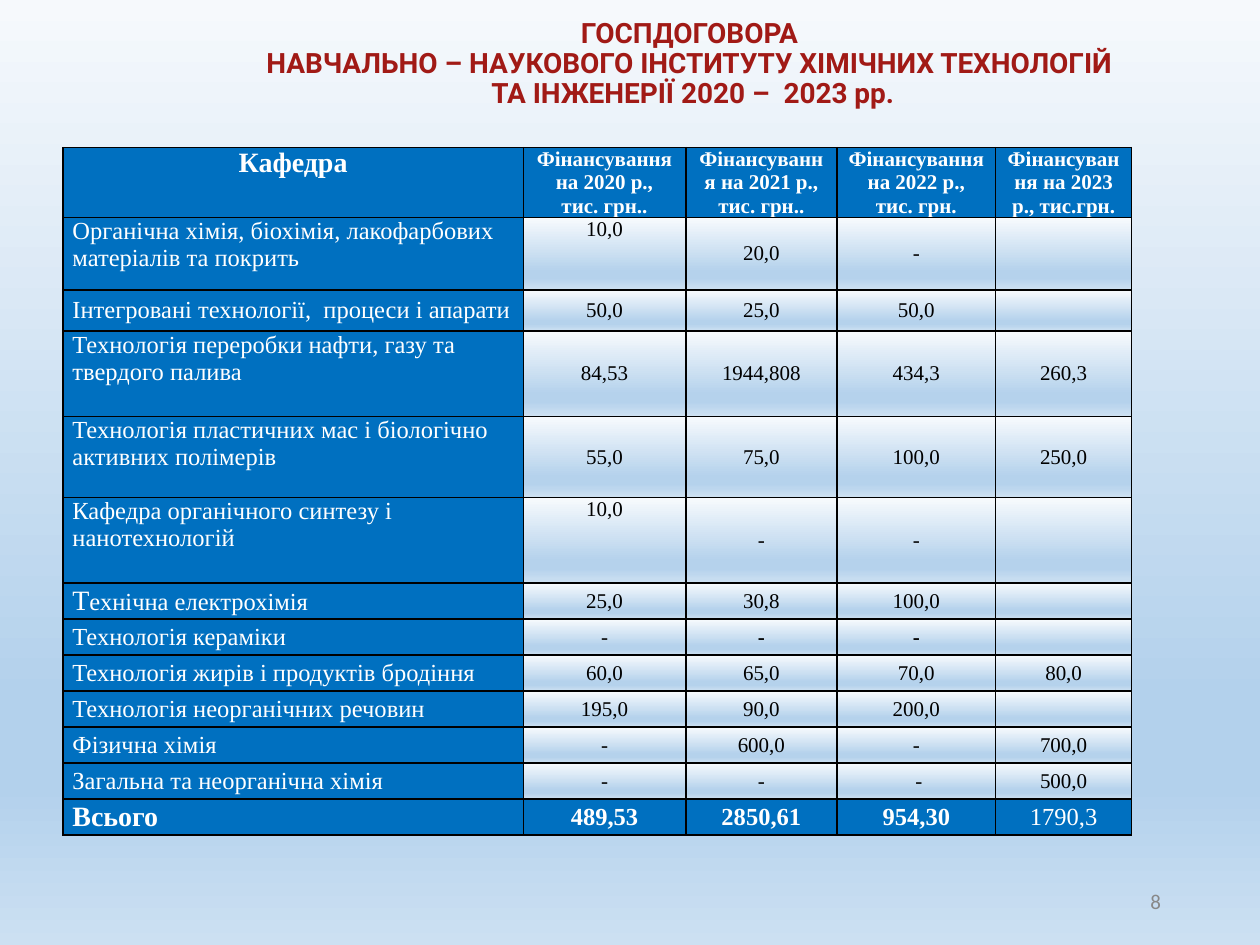
"""Build the slide on contract funding by department."""
from dataclasses import dataclass

from lxml.etree import SubElement
from pptx import Presentation
from pptx.dml.color import RGBColor
from pptx.enum.text import MSO_ANCHOR, MSO_AUTO_SIZE, PP_ALIGN
from pptx.oxml.ns import qn
from pptx.util import Pt


@dataclass(frozen=True)
class Theme:
    """Colours, fonts and type sizes of the slide."""
    red: str = "A11A16"
    blue: str = "0070C0"
    white: str = "FFFFFF"
    black: str = "000000"
    grey: str = "888888"
    page: tuple = ("F6F9FC", "B3D1EC", "B3D1EC", "CCE0F2")
    pale: tuple = ("F7FAFD", "B5D2EC", "B5D2EC", "CEE1F2")
    stops: tuple = (0, 74, 83, 100)
    head: str = "Roboto"
    body: str = "Times New Roman"
    foot: str = "Calibri"
    big: int = 16
    mid: int = 14
    small: int = 12


THEME = Theme()
TITLE = ("ГОСПДОГОВОРА \vНАВЧАЛЬНО – НАУКОВОГО ІНСТИТУТУ ХІМІЧНИХ ТЕХНОЛОГІЙ "
         "\vТА ІНЖЕНЕРІЇ 2020 –  2023 рр.")
WIDTHS = (263, 92.9, 86.4, 90.7, 77.7)
LOW = 20.6
HEAD = ("Кафедра", "Фінансування на 2020 р.,\nтис. грн..",
        "Фінансування на 2021 р.,\nтис. грн..",
        "Фінансування на 2022 р.,\nтис. грн.",
        "Фінансування на 2023 р., тис.грн.")
ROWS = (
    (41.4, "Органічна хімія, біохімія, лакофарбових матеріалів та покрить",
     "10,0", "20,0", "-", ""),
    (23.5, "Інтегровані технології,  процеси і апарати",
     "50,0", "25,0", "50,0", ""),
    (48.6, "Технологія переробки нафти, газу та твердого палива",
     "84,53", "1944,808", "434,3", "260,3"),
    (46.6, "Технологія пластичних мас і біологічно активних полімерів",
     "55,0", "75,0", "100,0", "250,0"),
    (48.8, "Кафедра органічного синтезу і нанотехнологій",
     "10,0", "-", "-", ""),
    (LOW, "Технічна електрохімія", "25,0", "30,8", "100,0", ""),
    (LOW, "Технологія кераміки", "-", "-", "-", ""),
    (LOW, "Технологія жирів і продуктів бродіння",
     "60,0", "65,0", "70,0", "80,0"),
    (LOW, "Технологія неорганічних речовин", "195,0", "90,0", "200,0", ""),
    (LOW, "Фізична хімія", "-", "600,0", "-", "700,0"),
    (LOW, "Загальна та неорганічна хімія", "-", "-", " -", "500,0"),
)
TOTAL = ("Всього", "489,53", "2850,61", "954,30", "1790,3")


def write(frame, text, size=THEME.small, color=THEME.black, font=THEME.body,
          bold=False, align=PP_ALIGN.CENTER, space=1.0, lead=None):
    """Fill a frame with text, one paragraph a line; lead sizes the first letter."""
    frame.word_wrap = True
    for num, line in enumerate(text.split("\n")):
        para = frame.add_paragraph() if num else frame.paragraphs[0]
        para.alignment, para.line_spacing = align, space
        if not line:
            SubElement(para._p, qn("a:endParaRPr"), sz=str(size * 100))
            continue
        parts = [(line[0], lead), (line[1:], size)] if lead else [(line, size)]
        for part, points in parts:
            for spot, piece in enumerate(part.split("\v")):
                if spot:
                    para.add_line_break()
                run = para.add_run()
                run.text = piece
                run.font.name, run.font.size = font, Pt(points)
                run.font.bold = bold
                run.font.color.rgb = RGBColor.from_string(color)


def blend(fill, root, tints):
    """Give a fill a downward gradient of the theme's stops."""
    fill.solid()
    node = next(root.iter(qn("a:solidFill"), qn("a:gradFill")))
    while node.getparent().tag.startswith(qn("a:ln")):
        node = node.getnext()
    node.tag
    grad = SubElement(node.getparent(), qn("a:gradFill"), rotWithShape="1")
    node.getparent().replace(node, grad)
    stops = SubElement(grad, qn("a:gsLst"))
    for place, tint in zip(THEME.stops, tints):
        stop = SubElement(stops, qn("a:gs"), pos=str(place * 1000))
        SubElement(stop, qn("a:srgbClr"), val=tint)
    SubElement(grad, qn("a:lin"), ang="5400000", scaled="0")


def edge(cell):
    """Draw a thin black line on all four sides of a cell."""
    props = cell._tc.get_or_add_tcPr()
    for side in ("a:lnL", "a:lnR", "a:lnT", "a:lnB"):
        line = SubElement(props, qn(side), w=str(Pt(1)))
        SubElement(SubElement(line, qn("a:solidFill")),
                   qn("a:srgbClr"), val=THEME.black)


def put(cell, text, tint=None, top=False, **form):
    """Fill one cell: flat when a tint is given, else pale gradient."""
    cell.margin_left = cell.margin_right = Pt(5.4)
    cell.margin_top = cell.margin_bottom = 0
    cell.vertical_anchor = MSO_ANCHOR.TOP if top else MSO_ANCHOR.MIDDLE
    if tint:
        cell.fill.solid()
        cell.fill.fore_color.rgb = RGBColor.from_string(tint)
    else:
        blend(cell.fill, cell._tc.tcPr, THEME.pale)
    props = cell._tc.tcPr
    paint = props[0]
    edge(cell)
    props.append(paint)
    write(cell.text_frame, text, **form)


def title(slide):
    """Place the title."""
    shape = slide.shapes.title
    shape.left, shape.top = Pt(90), Pt(0)
    shape.width, shape.height = Pt(612), Pt(73.4)
    frame = shape.text_frame
    frame.auto_size = MSO_AUTO_SIZE.NONE
    frame.vertical_anchor = MSO_ANCHOR.MIDDLE
    write(frame, TITLE, size=THEME.big, color=THEME.red, font=THEME.head,
          bold=True, space=0.9)


def grid(slide):
    """Place the table of funding."""
    highs = [40, *(row[0] for row in ROWS), LOW]
    table = slide.shapes.add_table(
        len(highs), len(WIDTHS), Pt(36), Pt(84.4),
        Pt(sum(WIDTHS)), Pt(sum(highs))).table
    table.first_row = table.horz_banding = False
    for col, width in zip(table.columns, WIDTHS):
        col.width = Pt(width)
    for row, high in zip(table.rows, highs):
        row.height = Pt(high)
    dark = {"tint": THEME.blue, "color": THEME.white}
    for col, text in enumerate(HEAD):
        put(table.cell(0, col), text, top=True, bold=True,
            size=THEME.small if col else THEME.big, **dark)
    for num, (high, name, *sums) in enumerate(ROWS, 1):
        put(table.cell(num, 0), name, top=high > 40, size=THEME.mid,
            align=PP_ALIGN.LEFT, **dark,
            lead=THEME.big if name.startswith("Технічна") else None)
        for col, text in enumerate(sums, 1):
            put(table.cell(num, col), text, top=text == "10,0",
                bold=name.endswith("кераміки") and col > 1)
    for col, text in enumerate(TOTAL):
        put(table.cell(len(highs) - 1, col), text, bold=col < 4,
            size=THEME.mid if col else THEME.big,
            align=PP_ALIGN.CENTER if col else PP_ALIGN.LEFT, **dark)


def number(slide):
    """Place the page number."""
    box = slide.shapes.add_textbox(Pt(508.5), Pt(500.5), Pt(162), Pt(28.8))
    box.text_frame.vertical_anchor = MSO_ANCHOR.MIDDLE
    write(box.text_frame, "8", color=THEME.grey, font=THEME.foot,
          align=PP_ALIGN.RIGHT)


def main():
    """Build and save the slide."""
    deck = Presentation()
    deck.slide_width, deck.slide_height = Pt(720), Pt(540)
    slide = deck.slides.add_slide(deck.slide_layouts[5])
    blend(slide.background.fill, slide.element, THEME.page)
    title(slide)
    grid(slide)
    number(slide)
    deck.save("out.pptx")


if __name__ == "__main__":
    main()
